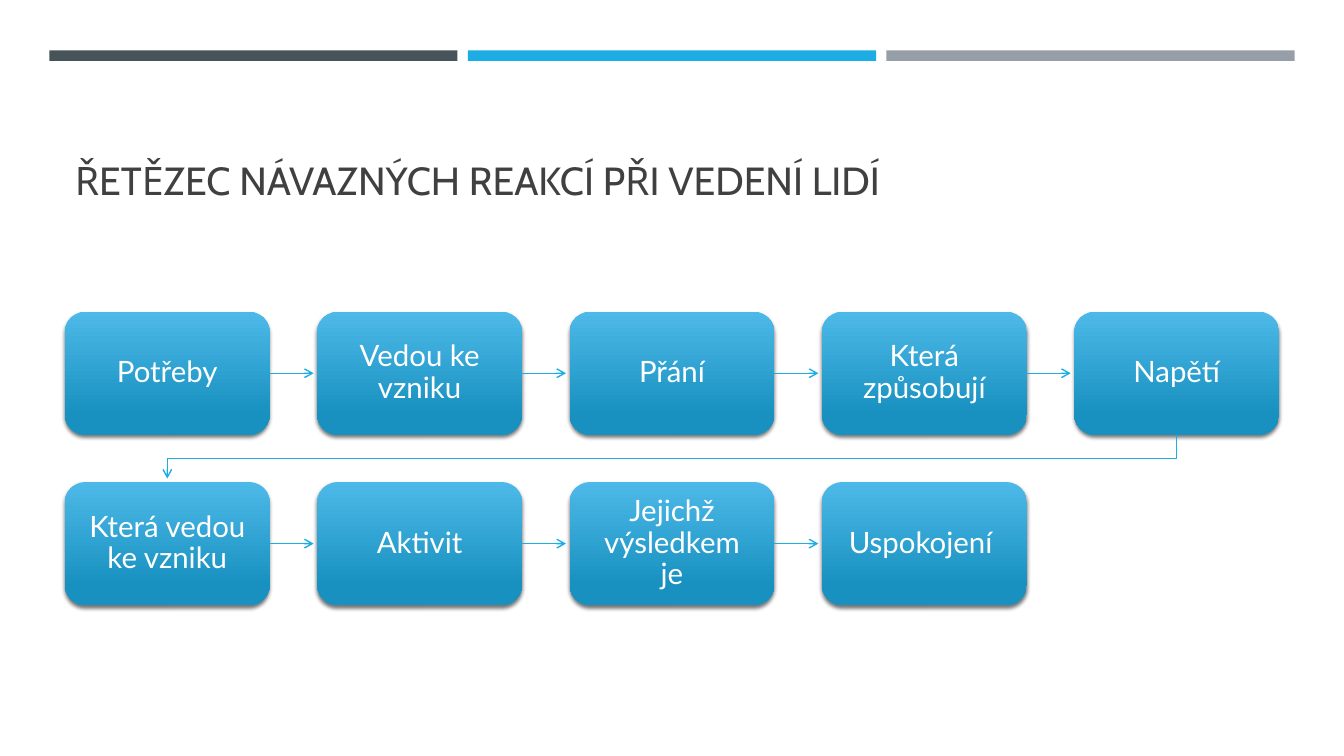
from lxml.etree import SubElement
from pptx import Presentation
from pptx.dml.color import RGBColor
from pptx.enum.shapes import MSO_CONNECTOR, MSO_SHAPE
from pptx.enum.text import MSO_ANCHOR, MSO_AUTO_SIZE, PP_ALIGN
from pptx.oxml.ns import qn
from pptx.util import Pt

BOX_LEFT, BOX_TOP = 46.3, 222.6
BOX_WIDTH, BOX_HEIGHT = 146.4, 88
COLUMN_PITCH, ROW_PITCH = 180.25, 121.7
ARROW_GAP = 2.5
BAR_LEFT, BAR_TOP, BAR_WIDTH, BAR_HEIGHT, BAR_PITCH = 35.2, 36, 291.6, 7.5, 299
COLUMNS = 5

BAR_COLORS = ["465359", "1CADE4", "969FA7"]
STEPS = [
    "Potřeby", "Vedou ke vzniku", "Přání", "Která způsobují", "Napětí",
    "Která vedou ke vzniku", "Aktivit", "Jejichž výsledkem je", "Uspokojení ",
]


def color(value):
    return RGBColor.from_string(value)


class ReactionSlide:
    title_font, body_font = "Cabin", "Lato"
    title_color, accent, text_color = "404040", "1CADE4", "FFFFFF"
    gradient = [(0, "4DB9E8"), (0.84, "1891C0")]

    def __init__(self, presentation):
        self.slide = presentation.slides.add_slide(presentation.slide_layouts[5])

    def format_text(self, paragraph, font_name, size, text_color):
        for run in paragraph.runs:
            run.font.name = font_name
            run.font.size = Pt(size)
            run.font.color.rgb = color(text_color)

    def add_title(self, text, left, top, width, height):
        title = self.slide.shapes.title
        title.left, title.top = Pt(left), Pt(top)
        title.width, title.height = Pt(width), Pt(height)
        frame = title.text_frame
        frame.text = text
        frame.vertical_anchor = MSO_ANCHOR.BOTTOM
        frame.auto_size = MSO_AUTO_SIZE.NONE
        frame.paragraphs[0].alignment = PP_ALIGN.LEFT
        self.format_text(frame.paragraphs[0], self.title_font, 28, self.title_color)

    def add_shape(self, kind, left, top, width, height):
        """Add a preset shape without line or shadow."""
        shape = self.slide.shapes.add_shape(
            kind, Pt(left), Pt(top), Pt(width), Pt(height))
        shape.line.fill.background()
        shape.shadow.inherit = False
        return shape

    def add_bar(self, left, fill):
        bar = self.add_shape(MSO_SHAPE.RECTANGLE, left, BAR_TOP, BAR_WIDTH, BAR_HEIGHT)
        bar.fill.solid()
        bar.fill.fore_color.rgb = color(fill)

    def add_step(self, text, left, top):
        box = self.add_shape(
            MSO_SHAPE.ROUNDED_RECTANGLE, left, top, BOX_WIDTH, BOX_HEIGHT)
        box.fill.gradient()
        box.fill.gradient_angle = 270
        for stop, (position, value) in zip(box.fill.gradient_stops, self.gradient):
            stop.position = position
            stop.color.rgb = color(value)
        self.add_shadow(box)

        frame = box.text_frame
        frame.text = text
        frame.word_wrap = True
        frame.vertical_anchor = MSO_ANCHOR.MIDDLE
        frame.margin_left = frame.margin_right = Pt(11.5)
        frame.margin_top = frame.margin_bottom = 0
        paragraph = frame.paragraphs[0]
        paragraph.alignment = PP_ALIGN.CENTER
        paragraph.line_spacing = 0.9
        self.format_text(paragraph, self.body_font, 21, self.text_color)

    def add_shadow(self, shape):
        effects = shape.element.spPr.find(qn("a:effectLst"))
        shadow = SubElement(
            effects, qn("a:outerShdw"), blurRad=str(Pt(3)), dist=str(Pt(2)),
            dir="5400000", algn="ctr", rotWithShape="0")
        black = SubElement(shadow, qn("a:srgbClr"), val="000000")
        SubElement(black, qn("a:alpha"), val="55000")

    def style_arrow(self, shape):
        shape.line.color.rgb = color(self.accent)
        shape.line.width = Pt(1)
        SubElement(shape.line._get_or_add_ln(), qn("a:tailEnd"), type="arrow")

    def add_arrow(self, start, end, y):
        arrow = self.slide.shapes.add_connector(
            MSO_CONNECTOR.STRAIGHT, Pt(start), Pt(y), Pt(end), Pt(y))
        self.style_arrow(arrow)
        SubElement(arrow.element.spPr, qn("a:effectLst"))

    def add_bent_arrow(self, points):
        corners = [(Pt(x), Pt(y)) for x, y in points]
        builder = self.slide.shapes.build_freeform(*corners[0])
        builder.add_line_segments(corners[1:], close=False)
        arrow = builder.convert_to_shape()
        arrow.fill.background()
        self.style_arrow(arrow)
        arrow.shadow.inherit = False


def main():
    presentation = Presentation()
    presentation.slide_width, presentation.slide_height = Pt(960), Pt(540)
    page = ReactionSlide(presentation)

    for index, fill in enumerate(BAR_COLORS):
        page.add_bar(BAR_LEFT + index * BAR_PITCH, fill)
    page.add_title("ŘETĚZEC NÁVAZNÝCH REAKCÍ PŘI VEDENÍ LIDÍ", 46.3, 55.4, 868.3, 93.6)

    for index, text in enumerate(STEPS):
        row, column = divmod(index, COLUMNS)
        left = BOX_LEFT + column * COLUMN_PITCH
        top = BOX_TOP + row * ROW_PITCH
        page.add_step(text, left, top)
        if index == len(STEPS) - 1:
            continue
        if column < COLUMNS - 1:
            page.add_arrow(left + BOX_WIDTH, left + COLUMN_PITCH - ARROW_GAP,
                           top + BOX_HEIGHT / 2)
        else:
            start_x, end_x = left + BOX_WIDTH / 2, BOX_LEFT + BOX_WIDTH / 2
            bottom, next_top = top + BOX_HEIGHT, top + ROW_PITCH
            middle = (bottom + next_top) / 2
            page.add_bent_arrow([(start_x, bottom), (start_x, middle),
                                 (end_x, middle), (end_x, next_top - ARROW_GAP)])

    presentation.save("out.pptx")


if __name__ == "__main__":
    main()
